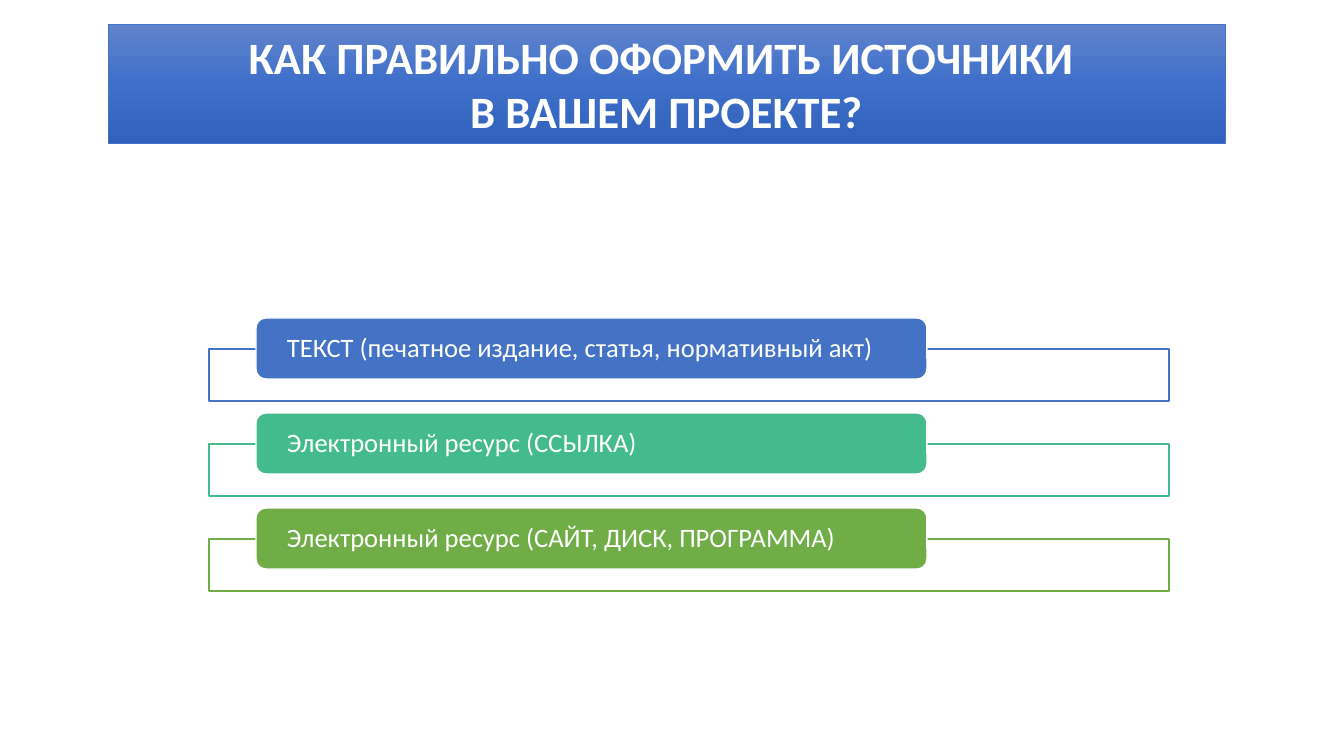
from copy import deepcopy

from pptx import Presentation
from pptx import util as u
from pptx.dml.color import RGBColor
from pptx.enum import shapes, text

WHITE = RGBColor(0xFF, 0xFF, 0xFF)
BLUE = RGBColor(0x44, 0x72, 0xC4)
TEAL = RGBColor(0x43, 0xBB, 0x8D)
GREEN = RGBColor(0x70, 0xAD, 0x47)
TITLE_GRADIENT = [
    (0, RGBColor(0x61, 0x83, 0xCB)),
    (0.5, RGBColor(0x3E, 0x70, 0xCA)),
    (1, RGBColor(0x30, 0x62, 0xBB)),
]

TITLE_LINES = ["КАК ПРАВИЛЬНО ОФОРМИТЬ ИСТОЧНИКИ ", "В ВАШЕМ ПРОЕКТЕ?"]
SOURCES = [
    ("ТЕКСТ (печатное издание, статья, нормативный акт)", BLUE),
    ("Электронный ресурс (ССЫЛКА)", TEAL),
    ("Электронный ресурс (САЙТ, ДИСК, ПРОГРАММА)", GREEN),
]

SLIDE_SIZE = (1344, 756)
TITLE_BOX = (108, 24, 1117, 119)
FRAME_BOX = (209, 349, 960, 52)
LABEL_BOX = (256, 318, 671, 61)
ROW_STEP = 95
LABEL_INSET = 28

TITLE_FONT = {"name": "Calibri", "size": u.Pt(32), "bold": True}
LABEL_FONT = {"name": "Calibri", "size": u.Pt(19), "bold": False}


def px(length):
    return round(length * 914400 / 100.8)


def add_box(slide, kind, box, line_color, line_width, fill_color=None):
    shape = slide.shapes.add_shape(kind, *map(px, box))
    shape.shadow.inherit = False
    shape.line.color.rgb = line_color
    shape.line.width = u.Pt(line_width)
    if fill_color is not None:
        shape.fill.solid()
        shape.fill.fore_color.rgb = fill_color
    return shape


def write_lines(shape, lines, font_values, alignment, inset, spacing):
    frame = shape.text_frame
    frame_values = {
        "word_wrap": True,
        "vertical_anchor": text.MSO_ANCHOR.MIDDLE,
        "margin_left": px(inset),
        "margin_right": px(inset),
        "margin_top": 0,
        "margin_bottom": 0,
    }
    for name, value in frame_values.items():
        setattr(frame, name, value)
    for index, line in enumerate(lines):
        paragraph = frame.add_paragraph() if index else frame.paragraphs[0]
        paragraph.alignment = alignment
        paragraph.line_spacing = spacing
        run = paragraph.add_run()
        run.text = line
        run.font.color.rgb = WHITE
        for name, value in font_values.items():
            setattr(run.font, name, value)


def fill_gradient(fill, stops):
    fill.gradient()
    fill.gradient_angle = 270
    first_stop = fill._fill._gradFill.gsLst[0]
    first_stop.addnext(deepcopy(first_stop))
    for stop, (position, color) in zip(fill.gradient_stops, stops):
        stop.position = position
        stop.color.rgb = color


def add_title(slide):
    title = add_box(slide, shapes.MSO_SHAPE.RECTANGLE, TITLE_BOX, BLUE, 0.5)
    fill_gradient(title.fill, TITLE_GRADIENT)
    write_lines(title, TITLE_LINES, TITLE_FONT, text.PP_ALIGN.CENTER, 10, 1)


def add_source(slide, row, caption, color):
    def shifted(box):
        left, top, width, height = box
        return left, top + row * ROW_STEP, width, height

    add_box(slide, shapes.MSO_SHAPE.RECTANGLE, shifted(FRAME_BOX), color, 1, WHITE)
    label = add_box(
        slide, shapes.MSO_SHAPE.ROUNDED_RECTANGLE, shifted(LABEL_BOX), WHITE, 1, color
    )
    write_lines(label, [caption], LABEL_FONT, text.PP_ALIGN.LEFT, LABEL_INSET, 0.9)


def main():
    presentation = Presentation()
    presentation.slide_width, presentation.slide_height = map(px, SLIDE_SIZE)
    slide = presentation.slides.add_slide(presentation.slide_layouts[6])
    add_title(slide)
    for row, (caption, color) in enumerate(SOURCES):
        add_source(slide, row, caption, color)
    presentation.save("out.pptx")


if __name__ == "__main__":
    main()
